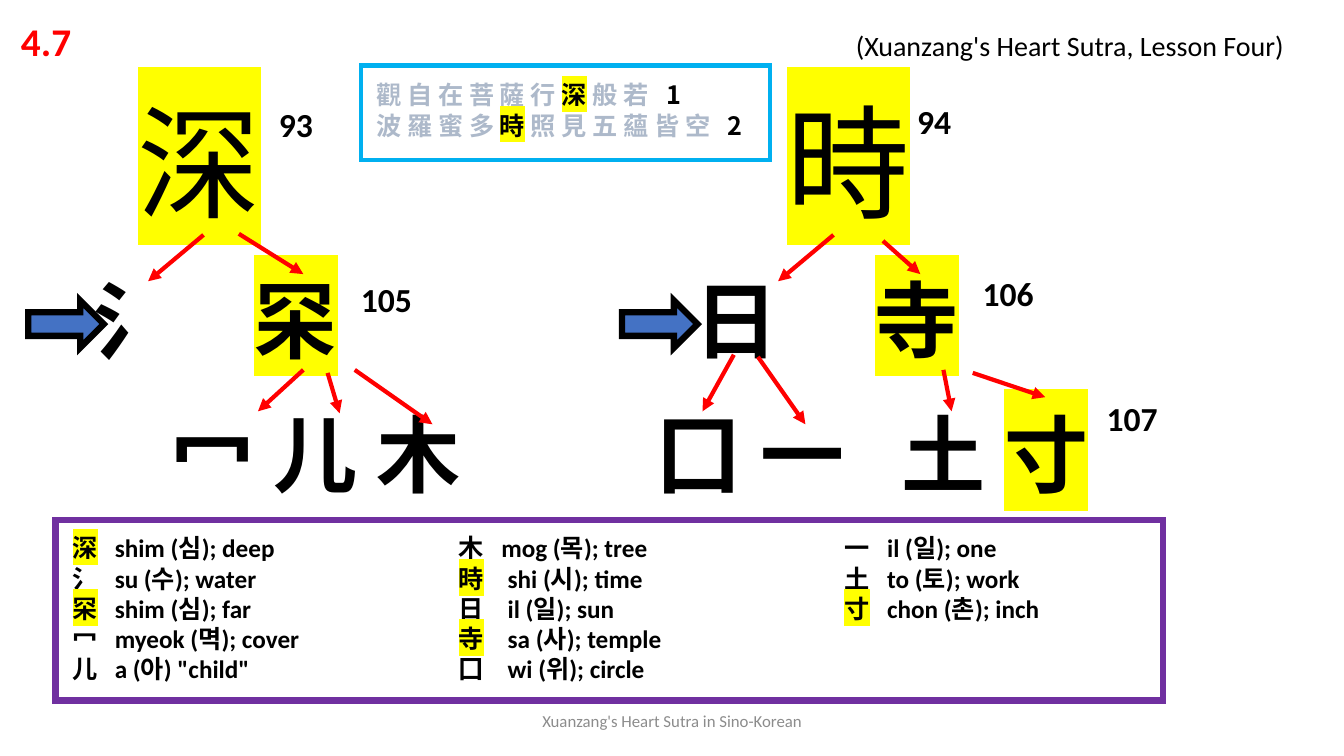
from dataclasses import dataclass
from lxml.etree import SubElement
from pptx import Presentation
from pptx.dml.color import RGBColor
from pptx.enum.shapes import MSO_CONNECTOR, MSO_SHAPE
from pptx.enum.text import MSO_ANCHOR, PP_ALIGN
from pptx.oxml.ns import qn
from pptx.util import Pt


@dataclass
class Theme:
    ink: str = "000000"
    red: str = "FF0000"
    pale: str = "ADB9CA"
    gray: str = "8C8C8C"
    blue: str = "4472C4"
    sky: str = "00B0F0"
    plum: str = "7030A0"
    mark: str = "FFFF00"
    latin: str = "Calibri"
    plain: str = "Arial"
    han: str = "Noto Sans CJK SC"
    huge: int = 88
    big: int = 60
    head: int = 28
    count: int = 24
    title: int = 20
    body: int = 18
    foot: int = 12


theme = Theme()
deck = Presentation()
deck.slide_width, deck.slide_height = Pt(960), Pt(540)
slide = deck.slides.add_slide(deck.slide_layouts[6])
shapes = slide.shapes


def add_box(x, y, w, h):
    frame = shapes.add_textbox(Pt(x), Pt(y), Pt(w), Pt(h)).text_frame
    frame.word_wrap = True
    return frame


def add_line(frame, parts, size, face=theme.latin, color=theme.ink, bold=True,
             tabs=(), after=0, pitch=None):
    first = frame.paragraphs[0]
    para = frame.add_paragraph() if first.runs else first
    para.space_after = Pt(after)
    para.line_spacing = pitch
    if tabs:
        stops = SubElement(para._p.get_or_add_pPr(), qn("a:tabLst"))
        for stop in tabs:
            SubElement(stops, qn("a:tab"), pos=str(Pt(stop)), algn="l")
    for text, change in parts:
        run = para.add_run()
        run.text = text
        font = run.font
        font.size = Pt(change.get("size", size))
        font.bold = change.get("bold", bold)
        font.color.rgb = RGBColor.from_string(change.get("color", color))
        font.name = change.get("face", face)
        props = run._r.get_or_add_rPr()
        asian = SubElement(props, qn("a:ea"), typeface=theme.han)
        props.find(qn("a:latin")).addnext(asian)
        if change.get("mark"):
            light = SubElement(props, qn("a:highlight"))
            SubElement(light, qn("a:srgbClr"), val=theme.mark)
            props.find(qn("a:solidFill")).addnext(light)
    return para


lit = {"mark": True, "color": theme.ink}
dark = {"color": theme.ink}

frame = add_box(318.24, 500.4, 324, 28.8)
frame.vertical_anchor = MSO_ANCHOR.MIDDLE
foot = add_line(frame, [("Xuanzang's Heart Sutra in Sino-Korean", {})],
                theme.foot, color=theme.gray, bold=False)
foot.alignment = PP_ALIGN.CENTER

add_line(add_box(7.9, 6.5, 935.3, 41.8),
         [("4.7", {}), ("\t", {}),
          ("(Xuanzang's Heart Sutra, Lesson Four)",
           {"size": theme.title, "color": theme.ink, "bold": False})],
         theme.head, color=theme.red, tabs=[596.3], pitch=1.07)

trees = [
    (32.4, 332, [
        ([59], [("\t", {}), ("深", lit)]),
        ([27, 141.8], [("\t氵\t", {}), ("罙", lit)]),
        ([82], [("\t冖 儿 木", {})])]),
    (462.2, 423.4, [
        ([92.7], [("\t", {}), ("時", lit)]),
        ([27, 155.6], [("\t日\t", {}), ("寺", lit)]),
        ([174.5], [("囗 一\t土 ", {}), ("寸", lit)])]),
]
for left, width, rows in trees:
    frame = add_box(left, 58.3, width, 307.4)
    for level, (tabs, parts) in enumerate(rows):
        add_line(frame, parts, theme.big if level else theme.huge,
                 theme.plain, bold=level > 0, tabs=tabs, after=24)

for left in (20.16, 444.24):
    arrow = shapes.add_shape(MSO_SHAPE.RIGHT_ARROW, Pt(left), Pt(214.6),
                             Pt(54), Pt(33.8))
    arrow.shadow.inherit = False
    arrow.fill.solid()
    arrow.fill.fore_color.rgb = RGBColor.from_string(theme.blue)
    arrow.line.color.rgb = RGBColor.from_string(theme.ink)
    arrow.line.width = Pt(4.5)
    SubElement(arrow.line._get_or_add_ln(), qn("a:miter"), lim="800000")

words = [
    ("深", "shim (심); deep", 30, True),
    ("氵", "su (수); water", 30, False),
    ("罙", "shim (심); far", 30, True),
    ("冖", "myeok (멱); cover", 30, False),
    ("儿", "a (아) \"child\"", 30, False),
    ("木", "mog (목); tree", 30.5, False),
    ("時", "shi (시); time", 35, True),
    ("日", "il (일); sun", 35, False),
    ("寺", "sa (사); temple", 35, True),
    ("囗", "wi (위); circle", 35, False),
    ("一", "il (일); one", 30.5, False),
    ("土", "to (토); work", 30.5, False),
    ("寸", "chon (촌); inch", 30.5, True),
]
frame = add_box(44.9, 377, 841, 116.6)
frame._txBody.bodyPr.set("numCol", "3")
for sign, gloss, stop, mark in words:
    add_line(frame, [(sign, {"mark": mark, "face": theme.plain}),
                     ("\t", {}), (gloss, {})],
             theme.body, tabs=[stop], pitch=Pt(21.6))

counts = [("93", 192.2, 70.6), ("94", 648, 68.4), ("105", 250.6, 195.8),
          ("106", 694.8, 191.5), ("107", 783.4, 280.8)]
for text, left, top in counts:
    add_line(add_box(left, top, 62, 36), [(text, {})], theme.count)

links = [
    (145.4, 167.8, 105.8, 200.9), (170.6, 167, 216.7, 195.8),
    (216.7, 264.2, 184.3, 293.8), (234, 266.4, 242.6, 295.2),
    (253.4, 264.2, 308.9, 303.1), (595.4, 167.8, 555.8, 200.9),
    (630.7, 172.1, 657.4, 195.8), (524.2, 253.4, 501.8, 293.8),
    (541.4, 254.9, 575.3, 303.1), (673.9, 264.2, 679.7, 293.8),
    (694.8, 266.4, 746.6, 283.7),
]
for ends in links:
    link = shapes.add_connector(MSO_CONNECTOR.STRAIGHT, *map(Pt, ends))
    link.line.color.rgb = RGBColor.from_string(theme.red)
    link.line.width = Pt(3)
    SubElement(link.line._get_or_add_ln(), qn("a:tailEnd"), type="triangle")
    SubElement(link._element.spPr, qn("a:effectLst"))

verse = [
    (207, [("觀 自 在 菩 薩 行 ", {}), ("深", lit), (" 般 若", {}),
           ("\t", {}), ("1", dark)]),
    (250.7, [("波 羅 蜜 多 ", {}), ("時", lit), (" 照 見 五 蘊 皆 空", {}),
             ("\t", {}), ("2", dark)]),
]
frame = add_box(261.7, 53.3, 284.4, 51.1)
for stop, parts in verse:
    add_line(frame, parts, theme.body, theme.han, theme.pale, tabs=[stop],
             pitch=Pt(21.6))

frames = [(39.6, 371.5, 791.3, 128.9, theme.plum, 4.5),
          (257.8, 46.8, 292.3, 67.7, theme.sky, 3)]
for x, y, w, h, color, width in frames:
    edge = shapes.add_shape(MSO_SHAPE.RECTANGLE, Pt(x), Pt(y), Pt(w), Pt(h))
    edge.shadow.inherit = False
    edge.fill.background()
    edge.line.color.rgb = RGBColor.from_string(color)
    edge.line.width = Pt(width)
    SubElement(edge.line._get_or_add_ln(), qn("a:miter"), lim="800000")

deck.save("out.pptx")
